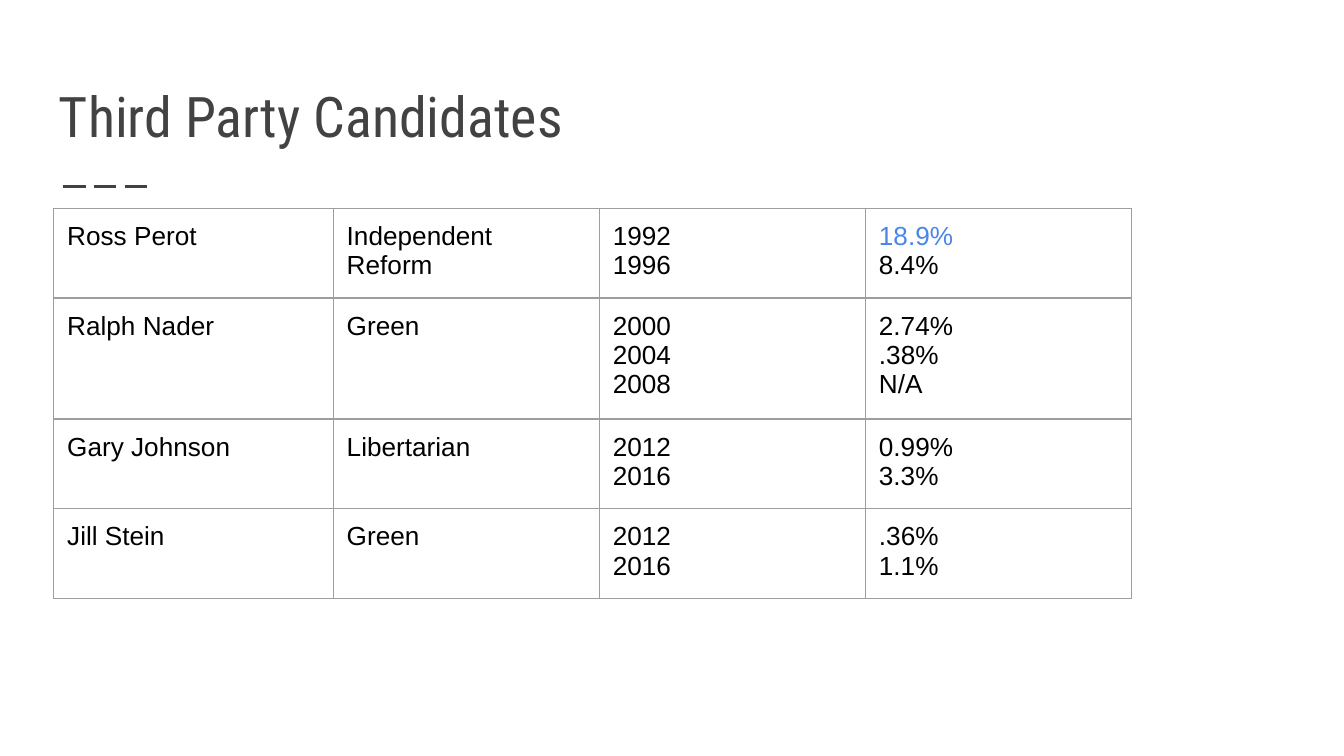
from lxml.etree import SubElement
from pptx import Presentation
from pptx.dml.color import RGBColor as RGB
from pptx.enum.dml import MSO_LINE as Dash
from pptx.enum.shapes import MSO_CONNECTOR as Conn
from pptx.enum.text import MSO_ANCHOR as Anchor
from pptx.oxml import parse_xml
from pptx.oxml.ns import nsdecls, qn
from pptx.util import Inches, Pt

COLORS = {"title": "424242", "text": "000000", "accent": "4A86E8", "border": "9E9E9E"}
TITLE = "Third Party Candidates"
CANDIDATES = [
    (["Ross Perot"], ["Independent", "Reform"], ["1992", "1996"], ["18.9%", "8.4%"]),
    (["Ralph Nader"], ["Green"], ["2000", "2004", "2008"], ["2.74%", ".38%", "N/A"]),
    (["Gary Johnson"], ["Libertarian"], ["2012", "2016"], ["0.99%", "3.3%"]),
    (["Jill Stein"], ["Green"], ["2012", "2016"], [".36%", "1.1%"]),
]
HIGHLIGHTS = {"18.9%"}
SLIDE_W = 10
SLIDE_H = SLIDE_W * 9 / 16
COLS = [2.08, 1.98, 1.98, 1.98]
INSET, LINE_H = 0.1, 0.22
ROWS = [2 * INSET + LINE_H * max(map(len, candidate)) for candidate in CANDIDATES]
FORMATS = {
    "title": {"name": "Roboto Condensed", "size": Pt(30)},
    "cell": {"name": "Arial", "size": Pt(14)},
}
INSETS = {f"margin_{side}": Inches(INSET) for side in ("left", "right", "top", "bottom")}


def set_all(obj, values):
    for key, value in values.items():
        setattr(obj, key, value)


def style(p, kind, color):
    for r in p.runs:
        set_all(r.font, FORMATS[kind])
        r.font.color.rgb = RGB.from_string(COLORS[color])


def add_borders(cell):
    tcPr = cell._tc.get_or_add_tcPr()
    for i, side in enumerate(("lnL", "lnR", "lnT", "lnB")):
        tcPr.insert(i, parse_xml(
            f'<a:{side} {nsdecls("a")} w="{Pt(0.75)}"><a:solidFill>'
            f'<a:srgbClr val="{COLORS["border"]}"/></a:solidFill></a:{side}>'))


prs = Presentation()
prs.slide_width, prs.slide_height = Inches(SLIDE_W), Inches(SLIDE_H)
slide = prs.slides.add_slide(prs.slide_layouts[6])
shapes = slide.shapes

rule = shapes.add_connector(Conn.STRAIGHT, *map(Inches, (0.47, 1.39, 1.14, 1.39)))
rule.line.color.rgb = RGB.from_string(COLORS["title"])
set_all(rule.line, {"width": Pt(1.5), "dash_style": Dash.LONG_DASH})
SubElement(rule._element.spPr, qn("a:effectLst"))

title = shapes.add_textbox(*map(Inches, (0.34, 0.41, 9.32, 0.8)))
tf = title.text_frame
set_all(tf, {"word_wrap": True, "vertical_anchor": Anchor.BOTTOM, "text": TITLE, **INSETS})
style(tf.paragraphs[0], "title", "title")

frame = shapes.add_table(len(ROWS), len(COLS), *map(Inches, (0.4, 1.55, sum(COLS), sum(ROWS))))
table = frame.table
set_all(table, {"first_row": False, "horz_banding": False})
for col, width in zip(table.columns, COLS):
    col.width = Inches(width)
for row, height, candidate in zip(table.rows, ROWS, CANDIDATES):
    row.height = Inches(height)
    for cell, lines in zip(row.cells, candidate):
        set_all(cell, {"text": "\n".join(lines), **INSETS})
        cell.fill.background()
        add_borders(cell)
        for p in cell.text_frame.paragraphs:
            style(p, "cell", "accent" if p.text in HIGHLIGHTS else "text")

prs.save("out.pptx")
